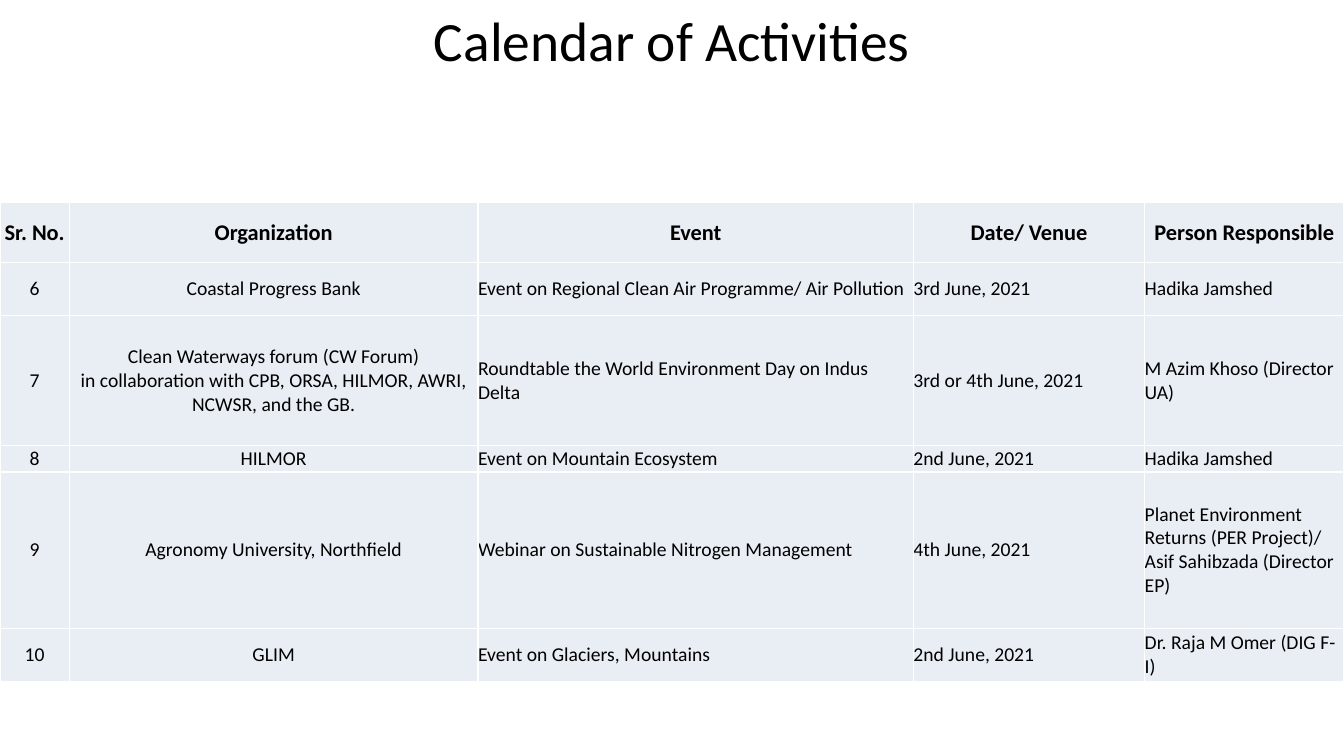
from dataclasses import dataclass

from lxml import etree
from pptx import Presentation
from pptx.dml.color import RGBColor
from pptx.enum import text as t
from pptx.oxml import ns
from pptx.util import Pt


@dataclass(frozen=True)
class Theme:
    font: str = "Calibri"
    ink: str = "000000"
    cell: str = "E9EDF4"
    border: str = "FFFFFF"
    title_size: float = 39.6
    header_size: float = 16
    body_size: float = 14


THEME = Theme()
SLIDE_WIDTH, SLIDE_HEIGHT = 960, 540
TABLE_TOP = 144.9
COLUMN_WIDTHS = [49.5, 292, 311, 165.2, 142.3]
ROW_HEIGHTS = [42.5, 38.2, 92.9, 18.7, 111.6, 38.2]
CENTERED_COLUMNS = 2

ACTIVITIES = [
    ["Sr. No.", "Organization", "Event", "Date/ Venue", "Person Responsible"],
    ["6", "Coastal Progress Bank",
     "Event on Regional Clean Air Programme/ Air Pollution",
     "3rd June, 2021", "Hadika Jamshed"],
    ["7", "Clean Waterways forum (CW Forum)\v"
     "in collaboration with CPB, ORSA, HILMOR, AWRI, NCWSR, and the GB.",
     "Roundtable the World Environment Day on Indus Delta",
     "3rd or 4th June, 2021", "M Azim Khoso (Director UA)"],
    ["8", "HILMOR", "Event on Mountain Ecosystem",
     "2nd June, 2021", "Hadika Jamshed"],
    ["9", "Agronomy University, Northfield",
     "Webinar on Sustainable Nitrogen Management", "4th June, 2021",
     "Planet Environment Returns (PER Project)/\vAsif Sahibzada (Director EP)"],
    ["10", "GLIM", "Event on Glaciers, Mountains",
     "2nd June, 2021", "Dr. Raja M Omer (DIG F-I)"],
]


def write(frame, wording, size, bold=False, centered=True):
    paragraph = frame.paragraphs[0]
    paragraph.text = wording
    paragraph.alignment = t.PP_ALIGN.CENTER if centered else t.PP_ALIGN.LEFT
    for run in paragraph.runs:
        run.font.name = THEME.font
        run.font.size = Pt(size)
        run.font.bold = bold
        run.font.color.rgb = RGBColor.from_string(THEME.ink)


def add_title(slide, wording):
    title = slide.shapes.add_textbox(Pt(120), Pt(0), Pt(720), Pt(56)).text_frame
    title.word_wrap = True
    title.vertical_anchor = t.MSO_ANCHOR.MIDDLE
    write(title, wording, THEME.title_size)


def add_borders(cell):
    properties = cell._tc.get_or_add_tcPr()
    for position, side in enumerate(("lnL", "lnR", "lnT", "lnB")):
        line = etree.Element(ns.qn(f"a:{side}"), w=str(Pt(1)))
        fill = etree.SubElement(line, ns.qn("a:solidFill"))
        etree.SubElement(fill, ns.qn("a:srgbClr"), val=THEME.border)
        properties.insert(position, line)


def style_cell(cell):
    cell.margin_left = cell.margin_right = Pt(0)
    cell.margin_top = cell.margin_bottom = Pt(0)
    cell.vertical_anchor = t.MSO_ANCHOR.MIDDLE
    cell.fill.solid()
    cell.fill.fore_color.rgb = RGBColor.from_string(THEME.cell)
    add_borders(cell)


def add_calendar(slide, activities):
    calendar = slide.shapes.add_table(
        len(ROW_HEIGHTS), len(COLUMN_WIDTHS), Pt(0), Pt(TABLE_TOP),
        Pt(sum(COLUMN_WIDTHS)), Pt(sum(ROW_HEIGHTS))).table
    for column, width in zip(calendar.columns, COLUMN_WIDTHS):
        column.width = Pt(width)
    for row, height in zip(calendar.rows, ROW_HEIGHTS):
        row.height = Pt(height)
    for r, activity in enumerate(activities):
        header = r == 0
        size = THEME.header_size if header else THEME.body_size
        for c, wording in enumerate(activity):
            cell = calendar.cell(r, c)
            style_cell(cell)
            write(cell.text_frame, wording, size, header,
                  header or c < CENTERED_COLUMNS)


def main():
    deck = Presentation()
    deck.slide_width, deck.slide_height = Pt(SLIDE_WIDTH), Pt(SLIDE_HEIGHT)
    slide = deck.slides.add_slide(deck.slide_layouts[6])
    add_calendar(slide, ACTIVITIES)
    add_title(slide, "Calendar of Activities")
    deck.save("out.pptx")


if __name__ == "__main__":
    main()
